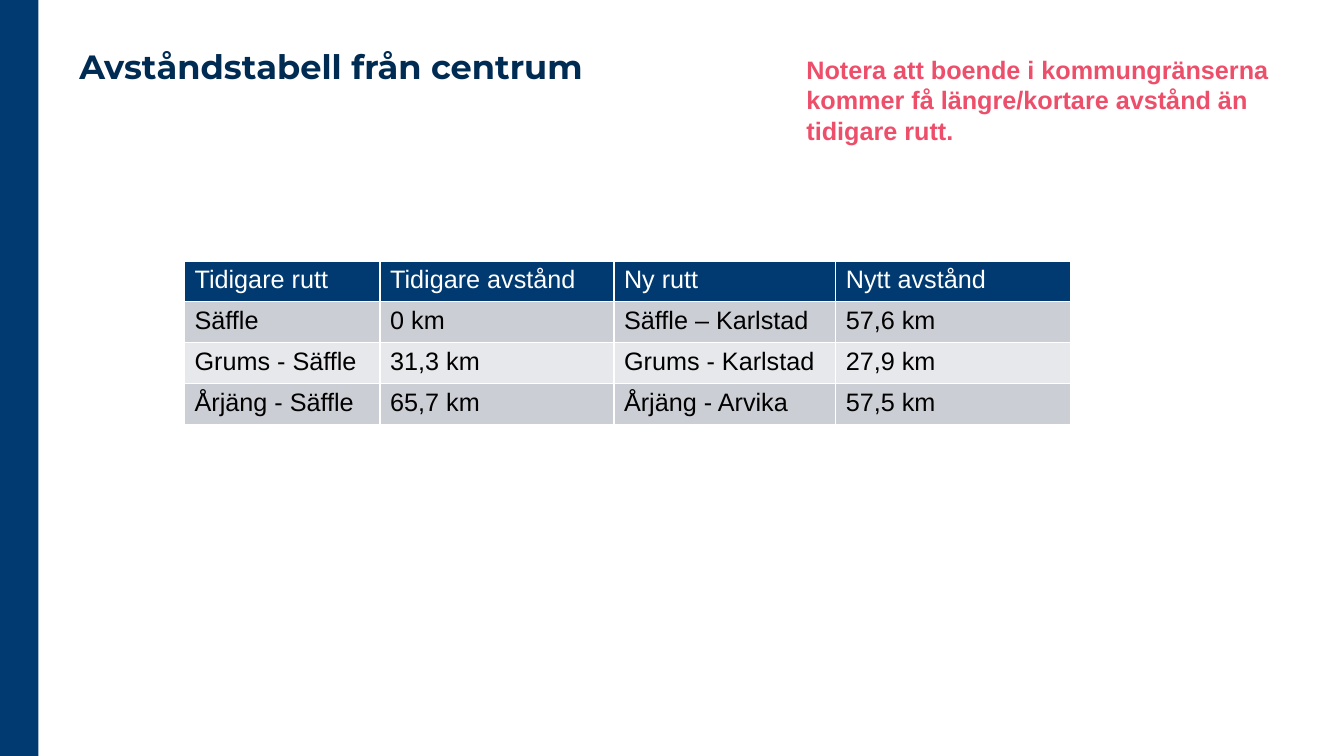
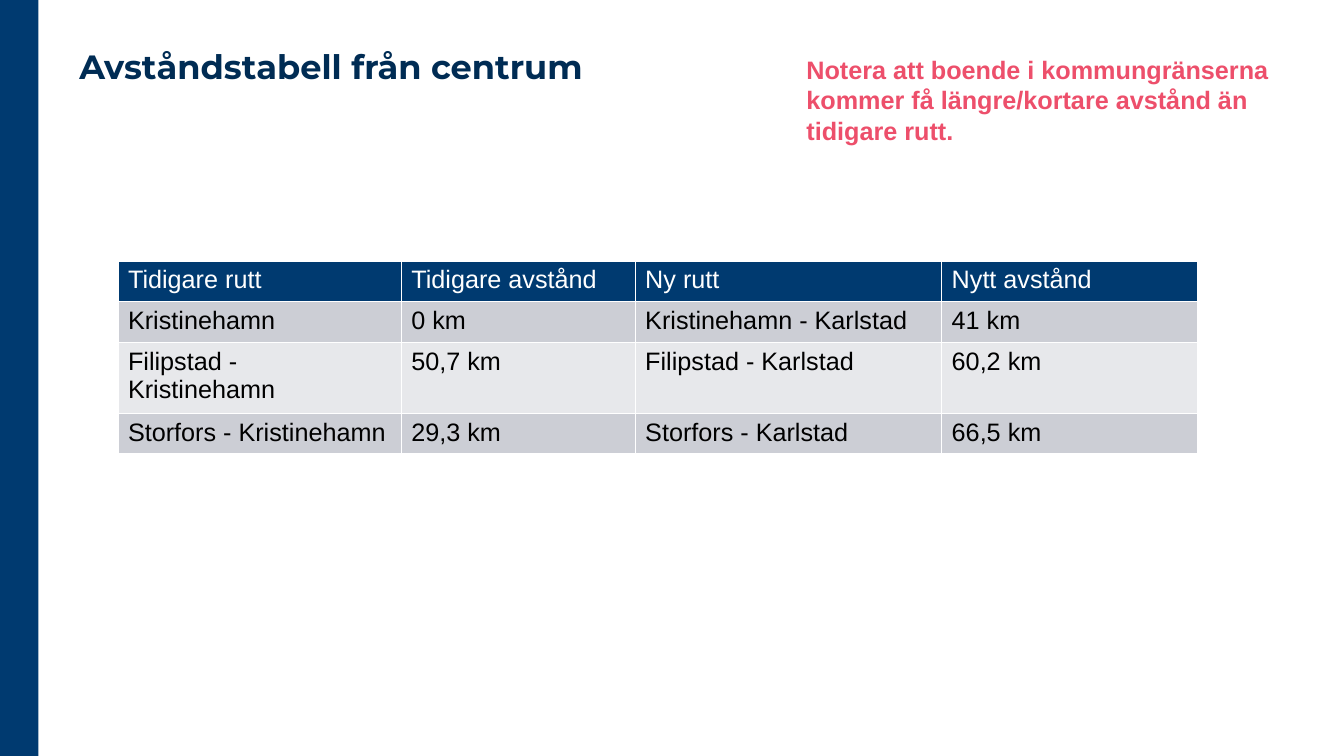
from dataclasses import dataclass

from lxml.etree import SubElement
from pptx import Presentation
from pptx.dml.color import RGBColor
from pptx.enum.shapes import MSO_SHAPE
from pptx.enum.text import MSO_ANCHOR
from pptx.oxml.ns import qn
from pptx.util import Inches, Pt


@dataclass(frozen=True)
class Theme:
    navy: RGBColor = RGBColor.from_string("003A70")
    title: RGBColor = RGBColor.from_string("002C54")
    note: RGBColor = RGBColor.from_string("ED4F6B")
    white: RGBColor = RGBColor.from_string("FFFFFF")
    black: RGBColor = RGBColor.from_string("000000")
    bands: tuple = (RGBColor.from_string("CCCED5"), RGBColor.from_string("E7E8EB"))
    title_font: str = "Montserrat"
    body_font: str = "Arial"
    title_size: Pt = Pt(24)
    body_size: Pt = Pt(18)
    border: Pt = Pt(1)


theme = Theme()

TITLE = "Avståndstabell från centrum"
NOTE = ("Notera att boende i kommungränserna kommer få längre/kortare "
        "avstånd än tidigare rutt.")
HEADINGS = ("Tidigare rutt", "Tidigare avstånd", "Ny rutt", "Nytt avstånd")
TABLE_TOP, ROW_HEIGHT = 2.59, 0.405

# Left edge, column widths and rows of each slide's table
TABLES = [
    (1.83, (1.94, 2.32, 2.2, 2.33), [
        ("Säffle", "0 km", "Säffle – Karlstad", "57,6 km"),
        ("Grums - Säffle", "31,3 km", "Grums - Karlstad", "27,9 km"),
        ("Årjäng - Säffle", "65,7 km", "Årjäng - Arvika", "57,5 km"),
    ]),
    (1.17, (2.81, 2.32, 3.04, 2.54), [
        ("Kristinehamn", "0 km", "Kristinehamn - Karlstad", "41 km"),
        ("Filipstad - Kristinehamn", "50,7 km", "Filipstad - Karlstad", "60,2 km"),
        ("Storfors - Kristinehamn", "29,3 km", "Storfors - Karlstad", "66,5 km"),
    ]),
]


def write(frame, text, color, font=theme.body_font, size=theme.body_size, bold=False):
    frame.word_wrap = True
    span = frame.paragraphs[0].add_run()
    span.text = text
    span.font.name, span.font.size, span.font.bold = font, size, bold
    span.font.color.rgb = color


def style_cell(cell, fill):
    properties = cell._tc.get_or_add_tcPr()
    for side in ("a:lnL", "a:lnR", "a:lnT", "a:lnB"):
        line = SubElement(properties, qn(side), w=str(theme.border))
        solid = SubElement(line, qn("a:solidFill"))
        SubElement(solid, qn("a:srgbClr"), val=str(theme.white))
    cell.fill.solid()
    cell.fill.fore_color.rgb = fill


deck = Presentation()
deck.slide_width, deck.slide_height = Inches(13.33), Inches(7.5)

for left, widths, rows in TABLES:
    page = deck.slides.add_slide(deck.slide_layouts[6])

    # Side band
    band = page.shapes.add_shape(MSO_SHAPE.RECTANGLE, 0, 0, Inches(0.38), deck.slide_height)
    band.shadow.inherit = False
    band.fill.solid()
    band.fill.fore_color.rgb = theme.navy
    band.line.fill.background()

    # Title
    box = page.shapes.add_textbox(Inches(0.69), Inches(0.36), Inches(7), Inches(0.6))
    box.text_frame.vertical_anchor = MSO_ANCHOR.MIDDLE
    write(box.text_frame, TITLE, theme.title, theme.title_font, theme.title_size, bold=True)

    # Distance table
    grid = [HEADINGS, *rows]
    table = page.shapes.add_table(
        len(grid), len(widths), Inches(left), Inches(TABLE_TOP),
        Inches(sum(widths)), Inches(ROW_HEIGHT * len(grid))).table
    table.first_row = table.horz_banding = False
    for column, width in zip(table.columns, widths):
        column.width = Inches(width)
    for row_index, texts in enumerate(grid):
        is_header = row_index == 0
        fill = theme.navy if is_header else theme.bands[(row_index - 1) % 2]
        for column_index, text in enumerate(texts):
            cell = table.cell(row_index, column_index)
            style_cell(cell, fill)
            write(cell.text_frame, text, theme.white if is_header else theme.black)

    # Note
    box = page.shapes.add_textbox(Inches(7.9), Inches(0.49), Inches(4.88), Inches(1.01))
    write(box.text_frame, NOTE, theme.note, bold=True)

deck.save("out.pptx")
